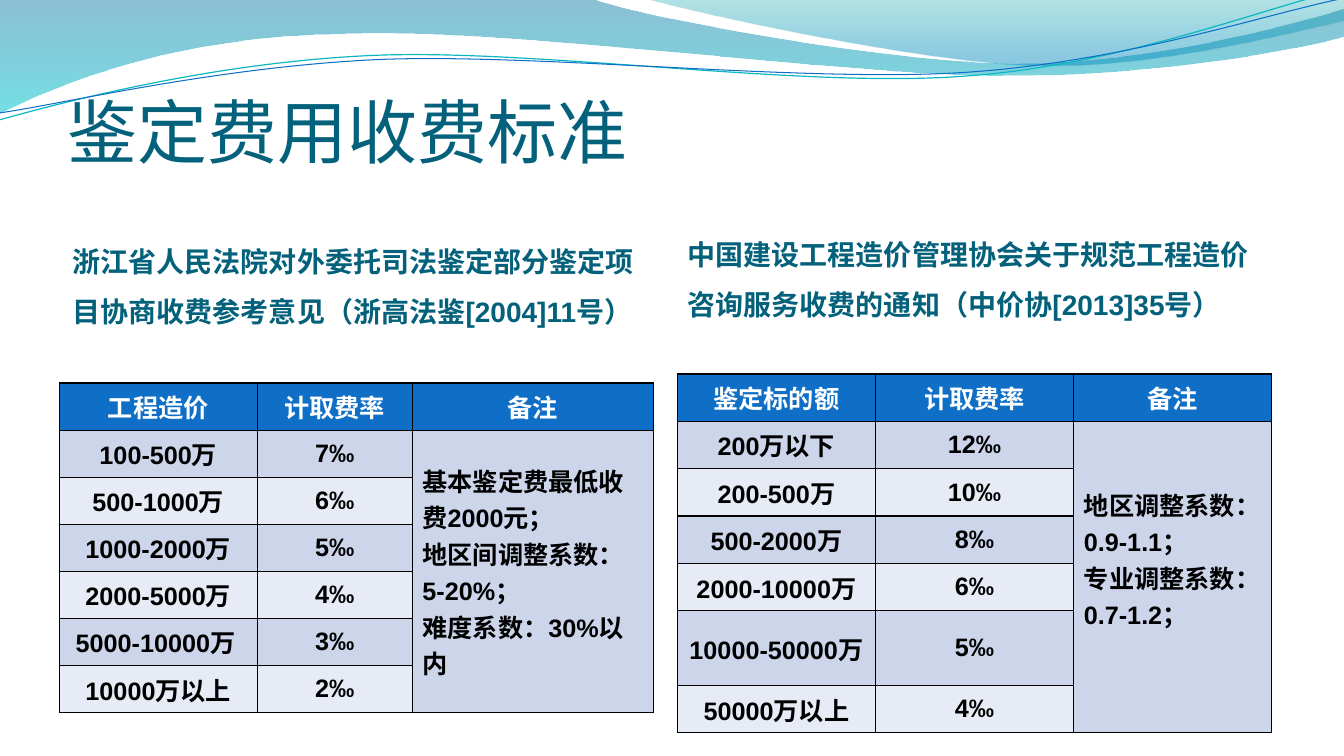
from dataclasses import dataclass

from lxml.etree import SubElement
from pptx import Presentation
from pptx.dml.color import RGBColor
from pptx.enum.text import MSO_ANCHOR as Anchor, MSO_AUTO_SIZE as AutoSize, PP_ALIGN as Align
from pptx.oxml.ns import qn
from pptx.util import Inches, Pt

Point = tuple[float, float]
Curve = tuple[Point, Point, Point]
TEAL = "04617B"
BLUE = "0F6FC6"
BLACK = "000000"
WHITE = "FFFFFF"
BANDS = ("CCD5EA", "E7EBF5")


@dataclass(frozen=True)
class Stop:
    position: float
    color: str
    opacity: int


@dataclass(frozen=True)
class Wave:
    start: Point
    segments: tuple[Point | Curve, ...]
    stops: tuple[Stop, ...] = ()
    line: str = ""
    width: float = 0


@dataclass(frozen=True)
class Standard:
    heading: str
    heading_box: tuple[float, float, float, float]
    left: float
    top: float
    height: float
    widths: tuple[float, ...]
    header: tuple[str, ...]
    rates: tuple[tuple[str, str], ...]
    remarks: str
    remarks_bottom: float


WAVES = (
    Wave((0, 0), (
        (5.87, -0.01), ((6.34, 0.17), (8.85, 0.63), (10.11, 0.63)),
        ((11.38, 0.63), (12.78, 0.26), (13.33, 0.09)), (13.35, 0.36),
        ((13.11, 0.44), (11.6, 0.76), (9.94, 0.75)),
        ((8.29, 0.75), (5.09, 0.28), (3.43, 0.34)),
        ((1.72, 0.36), (0.61, 0.83), (-0.01, 1.13)), (0, 0)),
        stops=(Stop(0, "0074A1", 45), Stop(1, "00C6CF", 55))),
    Wave((6.39, -0.01), (
        ((6.79, 0.11), (9.09, 0.62), (10.25, 0.65)),
        ((11.41, 0.69), (12.82, 0.32), (13.33, 0.21)), (13.33, 0), (6.39, -0.01)),
        stops=(Stop(0, "00A1A9", 30), Stop(0.8, "008BBF", 45))),
    Wave((-0.01, 1.19), (
        ((0.64, 1.01), (2.11, 0.62), (3.69, 0.55)),
        ((5.27, 0.48), (7.9, 0.87), (9.5, 0.76)),
        ((11.1, 0.66), (12.52, 0.08), (13.31, -0.1))), line="0AB8BF", width=0.85),
    Wave((0, 1.12), (
        ((0.63, 1.03), (2.18, 0.66), (3.78, 0.59)),
        ((5.37, 0.53), (7.96, 0.82), (9.55, 0.72)),
        ((11.15, 0.62), (12.55, 0.14), (13.34, -0.02))), line=BLUE, width=0.75),
)

COURT = Standard(
    "浙江省人民法院对外委托司法鉴定部分鉴定项目协商收费参考意见（浙高法鉴[2004]11号）",
    (0.67, 2.03, 5.89, 1.46), 0.59, 3.8, 3.27, (1.96, 1.54, 2.39),
    ("工程造价", "计取费率", "备注"),
    (("100-500万", "7‰"), ("500-1000万", "6‰"), ("1000-2000万", "5‰"),
     ("2000-5000万", "4‰"), ("5000-10000万 ", "3‰"), ("10000万以上", "2‰")),
    "基本鉴定费最低收费2000元；\n地区间调整系数：5-20%；\n难度系数：30%以内", 0.05)

ASSOCIATION = Standard(
    "中国建设工程造价管理协会关于规范工程造价咨询服务收费的通知（中价协[2013]35号）",
    (6.77, 2.03, 5.89, 1.31), 6.72, 3.71, 3.29, (1.96, 1.97, 1.96),
    ("鉴定标的额", "计取费率", "备注"),
    (("200万以下", "12‰"), ("200-500万", "10‰"), ("500-2000万", "8‰"),
     ("2000-10000万", "6‰"), ("10000-50000万", "5‰"), ("50000万以上", "4‰")),
    "地区调整系数：0.9-1.1；\n专业调整系数：0.7-1.2；", 0.41)


def rgb(value: str) -> RGBColor:
    return RGBColor.from_string(value)


def bend(ribbon, wave: Wave) -> None:
    edges = ribbon._element.iter(qn("a:lnTo"))
    edges = iter(list(edges))
    for segment in wave.segments:
        edge = next(edges)
        if len(segment) == 2:
            continue
        edge.tag = qn("a:cubicBezTo")
        for _ in segment[1:]:
            control = next(edges)
            control.getparent().remove(control)
            edge.append(control[0])


def draw_wave(slide, wave: Wave, depth: int) -> None:
    points = [wave.start]
    for segment in wave.segments:
        points.extend([segment] if len(segment) == 2 else segment)
    start, *others = [(Inches(x), Inches(y)) for x, y in points]
    builder = slide.shapes.build_freeform(*start, scale=1.0)
    builder.add_line_segments(others, close=bool(wave.stops))
    ribbon = builder.convert_to_shape()
    bend(ribbon, wave)
    ribbon.shadow.inherit = False
    if wave.stops:
        ribbon.line.fill.background()
        ribbon.fill.gradient()
        ribbon.fill.gradient_angle = 270
        for target, stop in zip(ribbon.fill.gradient_stops, wave.stops):
            target.position = stop.position
            target.color.rgb = rgb(stop.color)
        colors = ribbon.fill._xPr.iter(qn("a:srgbClr"))
        for color, stop in zip(colors, wave.stops):
            SubElement(color, qn("a:alpha"), val=str(stop.opacity * 1000))
    else:
        ribbon.fill.background()
        ribbon.line.color.rgb = rgb(wave.line)
        ribbon.line.width = Pt(wave.width)
    slide.shapes._spTree.insert(2 + depth, ribbon._element)


def style(paragraph, font: str, size: float, color: str, bold: bool, align: Align) -> None:
    paragraph.alignment = align
    paragraph.font.name = font
    paragraph.font.size = Pt(size)
    paragraph.font.bold = bold
    paragraph.font.color.rgb = rgb(color)


def place(holder, text: str, box: tuple[float, ...], insets: tuple[float, ...], anchor: Anchor):
    holder.left, holder.top, holder.width, holder.height = map(Inches, box)
    frame = holder.text_frame
    frame.text = text
    frame.word_wrap = True
    frame.auto_size = AutoSize.NONE
    frame.vertical_anchor = anchor
    (frame.margin_left, frame.margin_top,
     frame.margin_right, frame.margin_bottom) = map(Inches, insets)
    return frame.paragraphs[0]


def frame_cell(cell, fill: str) -> None:
    properties = cell._tc.get_or_add_tcPr()
    for side in ("a:lnL", "a:lnR", "a:lnT", "a:lnB"):
        border = SubElement(properties, qn(side), w=str(Pt(1)))
        SubElement(SubElement(border, qn("a:solidFill")), qn("a:srgbClr"), val=BLACK)
    cell.fill.solid()
    cell.fill.fore_color.rgb = rgb(fill)


def write_cell(cell, text: str, color: str, align: Align) -> None:
    cell.text = text
    cell.vertical_anchor = Anchor.MIDDLE
    for paragraph in cell.text_frame.paragraphs:
        style(paragraph, "Arial", 18, color, True, align)


def draw_standard(slide, holder, standard: Standard) -> None:
    heading = place(holder, standard.heading, standard.heading_box,
                    (0.05, 0, 0.05, 0), Anchor.MIDDLE)
    style(heading, "Arial", 20, TEAL, True, Align.LEFT)
    heading.line_spacing = 1.5
    heading.space_before = Pt(4)

    row_count = len(standard.rates) + 1
    fees = slide.shapes.add_table(
        row_count, len(standard.widths), Inches(standard.left), Inches(standard.top),
        Inches(sum(standard.widths)), Inches(standard.height)).table
    for column, width in zip(fees.columns, standard.widths):
        column.width = Inches(width)
    for column, label in enumerate(standard.header):
        frame_cell(fees.cell(0, column), BLUE)
        write_cell(fees.cell(0, column), label, WHITE, Align.CENTER)
    for row, rate in enumerate(standard.rates, 1):
        for column, text in enumerate(rate):
            frame_cell(fees.cell(row, column), BANDS[(row - 1) % 2])
            write_cell(fees.cell(row, column), text, BLACK, Align.CENTER)
        frame_cell(fees.cell(row, 2), BANDS[0])
    remarks = fees.cell(1, 2)
    remarks.merge(fees.cell(row_count - 1, 2))
    write_cell(remarks, standard.remarks, BLACK, Align.LEFT)
    remarks.margin_bottom = Inches(standard.remarks_bottom)


def main() -> None:
    deck = Presentation()
    deck.slide_width, deck.slide_height = Inches(13.33), Inches(7.5)
    slide = deck.slides.add_slide(deck.slide_layouts[4])
    for depth, wave in enumerate(WAVES):
        draw_wave(slide, wave, depth)
    title = place(slide.shapes.title, "鉴定费用收费标准", (0.67, 0.77, 12, 0.94),
                  (0, 0.05, 0, 0), Anchor.BOTTOM)
    style(title, "Calibri", 50, TEAL, False, Align.LEFT)
    _, court, court_content, association, association_content = slide.placeholders
    for unused in (court_content, association_content):
        unused._element.getparent().remove(unused._element)
    draw_standard(slide, court, COURT)
    draw_standard(slide, association, ASSOCIATION)
    deck.save("out.pptx")


if __name__ == "__main__":
    main()
